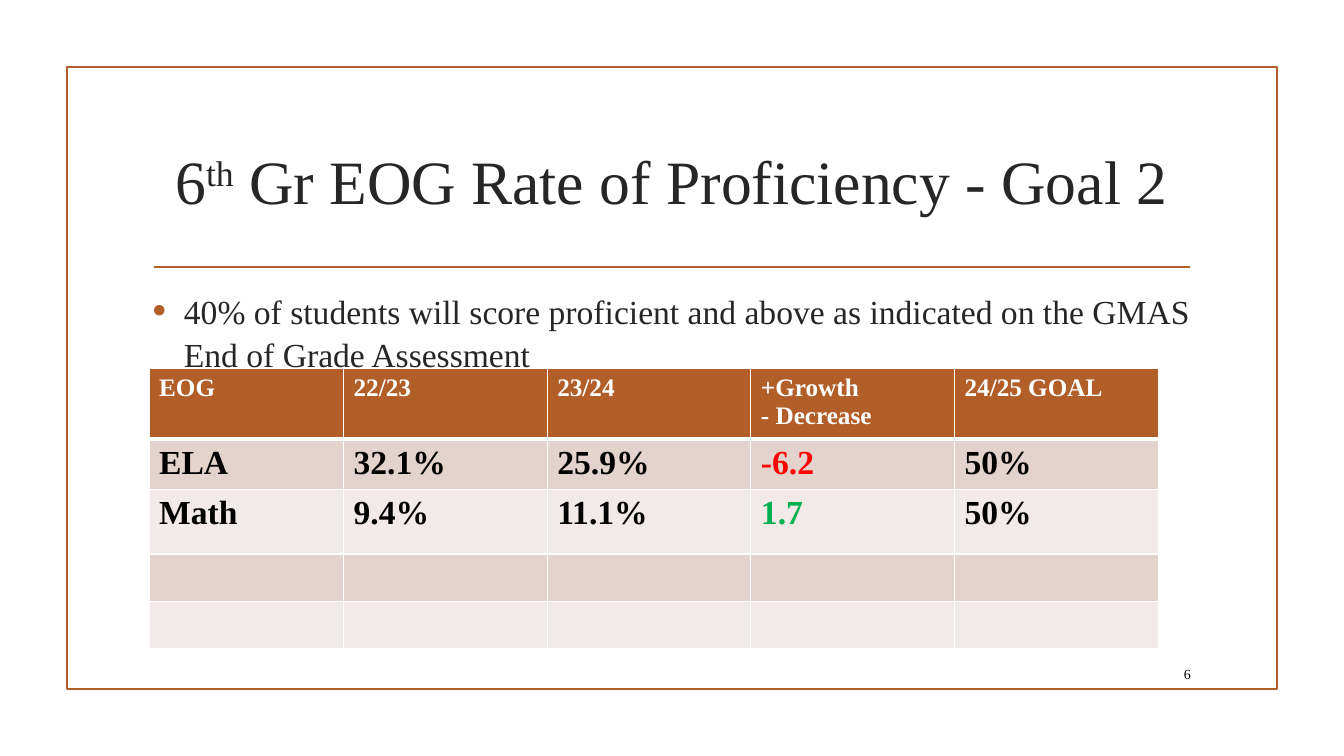
import pptx
import pptx.dml.color
import pptx.enum.shapes
import pptx.enum.text
import pptx.oxml
import pptx.oxml.ns
import pptx.util

# The grid: 160 columns by 90 rows, each cell a twelfth of an inch
UNIT = pptx.util.Inches(1) / 12
FONT = "Times New Roman"
RUST, INK, WHITE, BLACK = "B15E28", "262626", "FFFFFF", "000000"
RED, GREEN = "FF0000", "00B050"
BANDS = ["E4D2CD", "F2EAE8"]
ALIGN = pptx.enum.text.PP_ALIGN
ANCHOR = pptx.enum.text.MSO_ANCHOR

SCORES = [
    ["EOG", "22/23", "23/24", "+Growth\n- Decrease", "24/25 GOAL"],
    ["ELA", "32.1%", "25.9%", "-6.2", "50%"],
    ["Math", "9.4%", "11.1%", "1.7", "50%"],
    [""] * 5,
    [""] * 5,
]
GROWTH_COLUMN = 3
COLUMN_WIDTHS = [23.15] + [24.25] * 4
ROW_HEIGHTS = [7.75, 5.6, 7.65, 5.65, 5.6]


def grid(*cells):
    return [round(cell * UNIT) for cell in cells]


def color(value):
    return pptx.dml.color.RGBColor.from_string(value)


def element(xml):
    return pptx.oxml.parse_xml(xml.replace(" ", f" {pptx.oxml.ns.nsdecls('a')} ", 1))


def style_line(line):
    line.color.rgb = color(RUST)
    line.width = pptx.util.Pt(1.25)


def add_span(para, text, size, ink, bold=False, raised=False):
    span = para.add_run()
    span.text = text
    span.font.name = FONT
    span.font.size = pptx.util.Pt(size)
    span.font.bold = bold
    span.font.color.rgb = color(ink)
    if raised:
        span.font._element.set("baseline", "30000")


def add_frame(page, place):
    frame = page.shapes.add_shape(pptx.enum.shapes.MSO_SHAPE.RECTANGLE, *grid(*place))
    frame.shadow.inherit = False
    frame.fill.background()
    style_line(frame.line)


def add_rule(page, ends):
    rule = page.shapes.add_connector(pptx.enum.shapes.MSO_CONNECTOR.STRAIGHT, *grid(*ends))
    style_line(rule.line)
    rule._element.spPr.append(element("<a:effectLst />"))


def add_text(page, place, align, anchor):
    box = page.shapes.add_textbox(*grid(*place))
    box.text_frame.word_wrap = True
    box.text_frame.vertical_anchor = anchor
    para = box.text_frame.paragraphs[0]
    para.alignment = align
    return para


def add_bullet(para):
    properties = para._p.get_or_add_pPr()
    indent = pptx.util.Inches(0.31)
    properties.set("marL", str(indent))
    properties.set("indent", str(-indent))
    for xml in (
        f'<a:buClr ><a:srgbClr val="{RUST}"/></a:buClr>',
        '<a:buSzPct val="115000"/>',
        '<a:buFont typeface="Arial"/>',
        '<a:buChar char="•"/>',
    ):
        properties.append(element(xml))


def add_borders(cell, is_header):
    properties = cell._tc.get_or_add_tcPr()
    for side in "LRTB":
        width = pptx.util.Pt(3 if is_header and side == "B" else 1)
        properties.append(element(
            f'<a:ln{side} w="{width}"><a:solidFill><a:srgbClr val="{WHITE}"/>'
            f"</a:solidFill></a:ln{side}>"))


def score_ink(text, column):
    if column != GROWTH_COLUMN:
        return BLACK
    return RED if text.startswith("-") else GREEN


def fill_cell(cell, text, row, column):
    is_header = row == 0
    add_borders(cell, is_header)
    cell.fill.solid()
    cell.fill.fore_color.rgb = color(RUST if is_header else BANDS[(row - 1) % 2])
    size, ink = (18, WHITE) if is_header else (24, score_ink(text, column))
    for index, line in enumerate(text.split("\n") if text else []):
        frame = cell.text_frame
        para = frame.add_paragraph() if index else frame.paragraphs[0]
        add_span(para, line, size, ink, bold=True)


def add_scores(page, left, top):
    place = grid(left, top, sum(COLUMN_WIDTHS), sum(ROW_HEIGHTS))
    table = page.shapes.add_table(len(SCORES), len(SCORES[0]), *place).table
    for column, width in zip(table.columns, grid(*COLUMN_WIDTHS)):
        column.width = width
    for row, height in zip(table.rows, grid(*ROW_HEIGHTS)):
        row.height = height
    for row, texts in enumerate(SCORES):
        for column, text in enumerate(texts):
            fill_cell(table.cell(row, column), text, row, column)


def main():
    deck = pptx.Presentation()
    deck.slide_width, deck.slide_height = grid(160, 90)
    page = deck.slides.add_slide(deck.slide_layouts[6])

    # Frame and rule
    add_frame(page, (8, 8, 144, 74))
    add_rule(page, (18.35, 31.8, 141.7, 31.8))

    # Title
    title = add_text(page, (17, 12.85, 126, 17.15), ALIGN.CENTER, ANCHOR.MIDDLE)
    add_span(title, "6", 44, INK)
    add_span(title, "th", 44, INK, raised=True)
    add_span(title, " Gr EOG Rate of Proficiency - Goal 2", 44, INK)

    # Goal
    goal = add_text(page, (17, 33.6, 126, 46), ALIGN.LEFT, ANCHOR.TOP)
    goal.line_spacing = 1.08
    add_bullet(goal)
    add_span(goal, "40% of students will score proficient and above as indicated "
             "on the GMAS End of Grade Assessment", 24, INK)

    # Page number
    number = add_text(page, (135.85, 78.35, 7.1, 3.7), ALIGN.RIGHT, ANCHOR.MIDDLE)
    add_span(number, "6", 10, BLACK)

    # Score table
    add_scores(page, 17.75, 43.9)

    deck.save("out.pptx")


if __name__ == "__main__":
    main()
